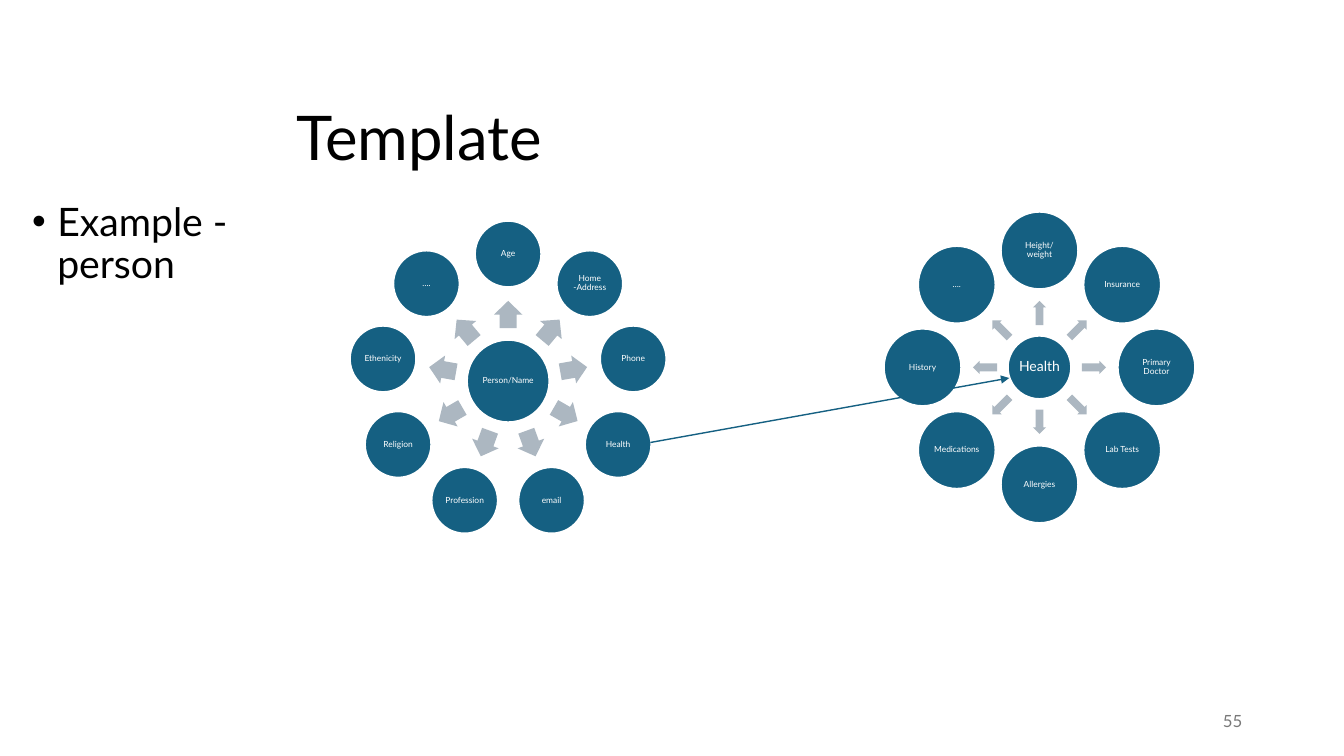
import math

from lxml import etree
from pptx import Presentation
from pptx import util as u
from pptx.dml.color import RGBColor
from pptx.enum import shapes, text
from pptx.oxml.ns import qn

PX = 9144  # 100 px to the inch
THEME = {
    "font": "Lato",
    "ink": RGBColor(0x00, 0x00, 0x00),
    "white": RGBColor(0xFF, 0xFF, 0xFF),
    "disc": RGBColor(0x15, 0x60, 0x82),
    "arrow": RGBColor(0xAC, 0xB7, 0xC1),
    "muted": RGBColor(0x79, 0x79, 0x79),
    "title": 44, "body": 28, "number": 12, "label": 6, "hub": 10,
}


def write(shape, words, size, color, align, anchor="MIDDLE", inset=None, spacing=0.9):
    frame = shape.text_frame
    settings = {"word_wrap": True, "vertical_anchor": text.MSO_ANCHOR[anchor]}
    if inset is not None:
        for side in ("left", "right", "top", "bottom"):
            settings["margin_" + side] = inset * PX
    for name, value in settings.items():
        setattr(frame, name, value)
    para = frame.paragraphs[0]
    para.alignment = text.PP_ALIGN[align]
    para.line_spacing = spacing
    span = para.add_run()
    span.text = words
    for name, value in {"name": THEME["font"], "size": u.Pt(THEME[size])}.items():
        setattr(span.font, name, value)
    span.font.color.rgb = THEME[color]
    return para


def add_centered(kind, x, y, width, height, fill):
    shape = page.shapes.add_shape(
        kind, round((x - width / 2) * PX), round((y - height / 2) * PX),
        width * PX, height * PX)
    shape.shadow.inherit = False
    shape.fill.solid()
    shape.fill.fore_color.rgb = THEME[fill]
    return shape


deck = Presentation()
deck.slide_width, deck.slide_height = 1333 * PX, 750 * PX
page = deck.slides.add_slide(deck.slide_layouts[6])

# Title, bullet and page number
texts = [
    ((284, 69, 975, 140), "Template", "title", "ink", "LEFT", "MIDDLE", 0.9),
    ((22, 196, 290, 193), "Example - person", "body", "ink", "LEFT", "TOP", 0.9),
    ((942, 695, 300, 40), "55", "number", "muted", "RIGHT", "MIDDLE", 1.0),
]
for place, words, size, color, align, anchor, spacing in texts:
    box = page.shapes.add_textbox(*(v * PX for v in place))
    para = write(box, words, size, color, align, anchor, spacing=spacing)
    if size == "body":
        para.space_before = u.Pt(10)
        props = para._p.get_or_add_pPr()
        props.set("marL", str(25 * PX))
        props.set("indent", str(-25 * PX))
        etree.SubElement(props, qn("a:buFont")).set("typeface", "Arial")
        etree.SubElement(props, qn("a:buChar")).set("char", "•")

# Two wheels: a hub with arrows pointing to evenly spaced discs
wheels = [
    {"center": (504, 378), "hub": ("Person/Name", 82, "label"),
     "disc": 66, "radius": 126, "arrow": (27, 28), "arrow_radius": 66,
     "labels": ["Age", "Home -Address", "Phone", "Health", "email",
                "Profession", "Religion", "Ethenicity", "…."]},
    {"center": (1031, 364.5), "hub": ("Health", 63, "hub"),
     "disc": 77, "radius": 116, "arrow": (24, 13), "arrow_radius": 54,
     "labels": ["Height/weight", "Insurance", "Primary Doctor", "Lab Tests",
                "Allergies", "Medications", "History", "…."]},
]
for wheel in wheels:
    cx, cy = wheel["center"]
    words, size, type_size = wheel["hub"]
    discs = [(cx, cy, size, words, type_size)]
    for i, label in enumerate(wheel["labels"]):
        degrees = 270 + i * 360 / len(wheel["labels"])
        dx, dy = math.cos(math.radians(degrees)), math.sin(math.radians(degrees))
        reach = wheel["arrow_radius"]
        arrow = add_centered(shapes.MSO_SHAPE.RIGHT_ARROW, cx + reach * dx,
                             cy + reach * dy, *wheel["arrow"], "arrow")
        arrow.line.fill.background()
        arrow.adjustments[0], arrow.adjustments[1] = 0.6, 0.5
        arrow.rotation = degrees % 360
        discs.append((cx + wheel["radius"] * dx, cy + wheel["radius"] * dy,
                      wheel["disc"], label, "label"))
    for x, y, size, words, type_size in discs:
        disc = add_centered(shapes.MSO_SHAPE.OVAL, x, y, size, size, "disc")
        disc.line.color.rgb = THEME["white"]
        disc.line.width = u.Pt(1.5)
        write(disc, words, type_size, "white", "CENTER", inset=1)

# Arrow from the person's health to the health wheel
link = page.shapes.add_connector(
    shapes.MSO_CONNECTOR.STRAIGHT, 645 * PX, 439 * PX, 1001 * PX, 375 * PX)
link.line.color.rgb = THEME["disc"]
link.line.width = u.Pt(1)
etree.SubElement(link.line._get_or_add_ln(), qn("a:tailEnd")).set("type", "triangle")
etree.SubElement(link._element.spPr, qn("a:effectLst"))

deck.save("out.pptx")
